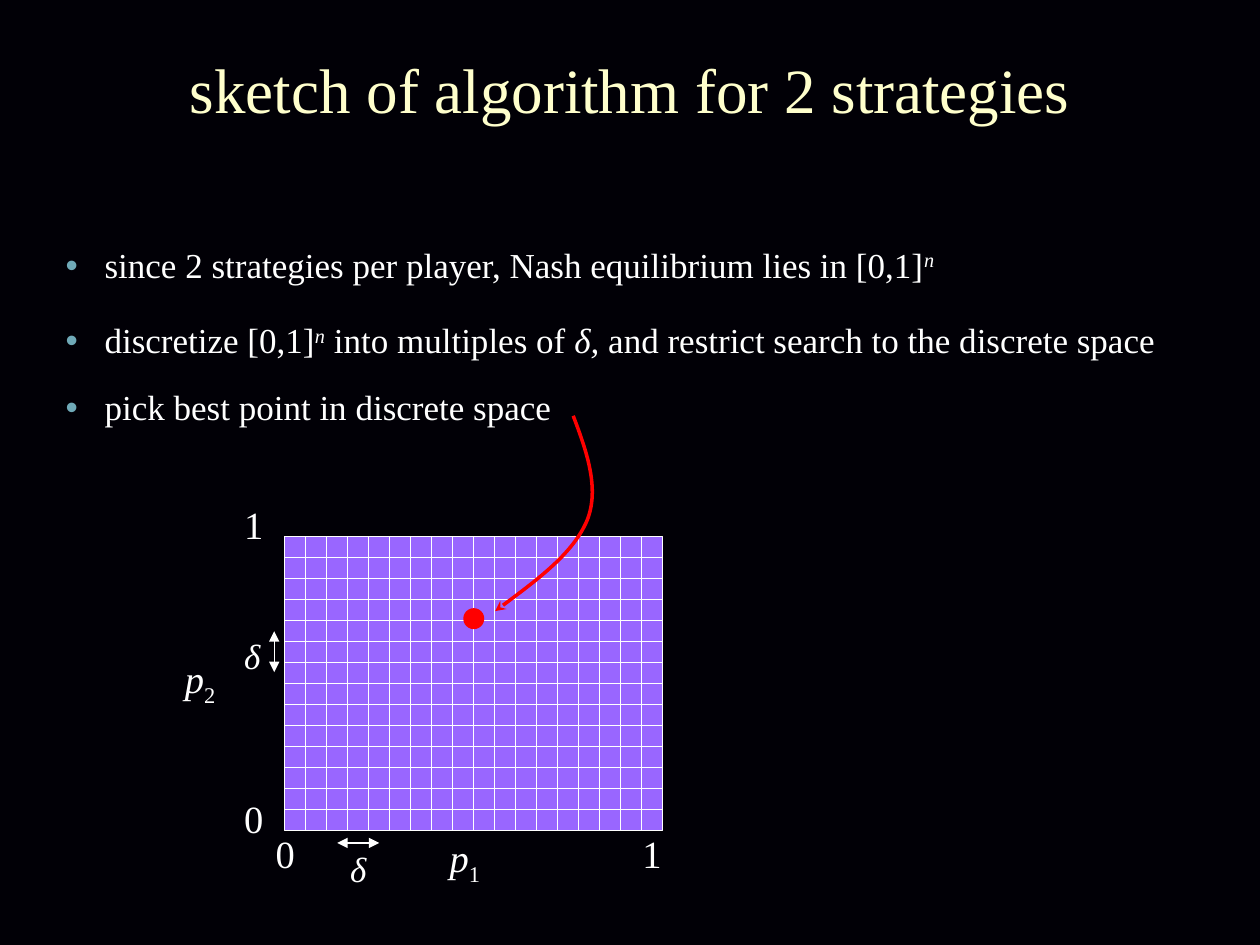
from lxml import etree
from pptx import Presentation
from pptx.dml.color import RGBColor
from pptx.enum.shapes import MSO_CONNECTOR, MSO_SHAPE
from pptx.enum.text import MSO_ANCHOR, MSO_AUTO_SIZE, PP_ALIGN
from pptx.oxml.ns import qn
from pptx.util import Inches, Pt

STRAIGHT = MSO_CONNECTOR.STRAIGHT
RECTANGLE, OVAL = MSO_SHAPE.RECTANGLE, MSO_SHAPE.OVAL
TOP, MIDDLE = MSO_ANCHOR.TOP, MSO_ANCHOR.MIDDLE
CENTER = PP_ALIGN.CENTER
FIT_SHAPE, NO_FIT = MSO_AUTO_SIZE.SHAPE_TO_FIT_TEXT, MSO_AUTO_SIZE.NONE

FONT = "Times New Roman"
BLACK, WHITE, CREAM = "010006", "FFFFFF", "FFFFCC"
PURPLE, RED, TEAL = "9966FF", "FF0000", "6FA9B7"

# The search space: square cells of side delta
COLUMNS, ROWS = 18, 14
CELL = 1 / 6
GRID_LEFT, GRID_TOP = 2.26, 4.26

PLAIN, ITALIC, POWER, INDEX = "plain", "italic", "power", "index"
BASELINES = {POWER: "30000", INDEX: "-25000"}

# Space before each bullet in points, then its spans
BULLETS = [
    (0, [("since 2 strategies per player, Nash equilibrium lies in [0,1]", PLAIN),
         ("n", POWER)]),
    (21.5, [("discretize [0,1]", PLAIN), ("n", POWER),
            (" into multiples of ", PLAIN), ("δ,", ITALIC),
            (" and restrict search to the discrete space", PLAIN)]),
    (16.5, [("pick best point in discrete space", PLAIN)]),
]

# Left, top, width, size and spans of each label around the grid
LABELS = [
    (1.84, 6.26, 0.36, 22, [("0", PLAIN)]),
    (1.84, 3.93, 0.36, 22, [("1", PLAIN)]),
    (2.09, 6.54, 0.36, 22, [("0", PLAIN)]),
    (5.0, 6.54, 0.36, 22, [("1", PLAIN)]),
    (1.37, 5.15, 0.5, 22, [("p", ITALIC), ("2", INDEX)]),
    (3.47, 6.57, 0.5, 22, [("p", ITALIC), ("1", INDEX)]),
    (1.84, 4.99, 0.44, 20, [("δ", ITALIC)]),
    (2.68, 6.68, 0.44, 20, [("δ", ITALIC)]),
]

POINTER_CURVE = [(4.55, 3.3), (4.66, 3.59), (4.76, 3.88), (4.66, 4.13),
                 (4.55, 4.39), (4.24, 4.62), (3.93, 4.85)]


def color(hex_value):
    return RGBColor.from_string(hex_value)


def grid_x(column):
    return GRID_LEFT + column * CELL


def grid_y(row):
    return GRID_TOP + row * CELL


def place(shape, left, top, width, height):
    shape.left, shape.top = Inches(left), Inches(top)
    shape.width, shape.height = Inches(width), Inches(height)


def style_font(font, size, hex_value):
    font.name, font.size = FONT, Pt(size)
    font.color.rgb = color(hex_value)


def style_line(shape, hex_value, width):
    shape.line.color.rgb = color(hex_value)
    shape.line.width = Pt(width)


def add_arrowheads(shape, kind, *ends):
    """Ends are headEnd and tailEnd, in that order."""
    for end in ends:
        etree.SubElement(shape.line._get_or_add_ln(), qn(f"a:{end}"), type=kind)


def write_spans(para, spans, size):
    for text, kind in spans:
        span = para.add_run()
        span.text = text
        style_font(span.font, size, WHITE)
        span.font.italic = kind in (ITALIC, POWER)
        if kind in BASELINES:
            span._r.get_or_add_rPr().set("baseline", BASELINES[kind])


def write_title(page):
    title = page.shapes.title
    place(title, 0.33, 0.08, 9.34, 1.25)
    title.text_frame.text = "sketch of algorithm for 2 strategies"
    title.text_frame.vertical_anchor = MIDDLE
    para = title.text_frame.paragraphs[0]
    para.alignment = CENTER
    style_font(para.runs[0].font, 36, CREAM)


def set_bullet(para):
    properties = para._p.get_or_add_pPr()
    properties.set("marL", str(Inches(0.56)))
    properties.set("indent", str(-Inches(0.31)))
    bullet_color = etree.SubElement(properties, qn("a:buClr"))
    etree.SubElement(bullet_color, qn("a:srgbClr"), val=TEAL)
    etree.SubElement(properties, qn("a:buChar"), char="•")


def write_bullets(page):
    body = page.placeholders[1]
    place(body, 0.17, 1.92, 9.67, 1.5)
    frame = body.text_frame
    frame.auto_size, frame.vertical_anchor = NO_FIT, TOP
    for number, (gap, spans) in enumerate(BULLETS):
        para = frame.add_paragraph() if number else frame.paragraphs[0]
        para.line_spacing, para.space_before = 0.9, Pt(gap)
        set_bullet(para)
        write_spans(para, spans, 20)


def add_filled(page, preset, left, top, width, height, fill):
    shape = page.shapes.add_shape(preset, 0, 0, 0, 0)
    place(shape, left, top, width, height)
    shape.shadow.inherit = False
    shape.fill.solid()
    shape.fill.fore_color.rgb = color(fill)
    return shape


def add_line(page, start, end):
    line = page.shapes.add_connector(
        STRAIGHT, *(Inches(length) for length in (*start, *end)))
    style_line(line, WHITE, 0.75)
    etree.SubElement(line._element.spPr, qn("a:effectLst"))
    return line


def add_grid(page):
    square = add_filled(page, RECTANGLE, GRID_LEFT, GRID_TOP,
                        COLUMNS * CELL, ROWS * CELL, PURPLE)
    style_line(square, WHITE, 0.75)
    for column in range(1, COLUMNS):
        add_line(page, (grid_x(column), grid_y(0)), (grid_x(column), grid_y(ROWS)))
    for row in range(1, ROWS):
        add_line(page, (grid_x(0), grid_y(row)), (grid_x(COLUMNS), grid_y(row)))


def add_delta_arrows(page):
    row_arrow = add_line(page, (grid_x(-0.5), grid_y(4.5)), (grid_x(-0.5), grid_y(6.45)))
    column_arrow = add_line(page, (grid_x(2.5), 6.69), (grid_x(4.5), 6.69))
    for arrow in (row_arrow, column_arrow):
        add_arrowheads(arrow, "triangle", "headEnd", "tailEnd")


def add_label(page, left, top, width, size, spans):
    box = page.shapes.add_textbox(Inches(left), Inches(top), Inches(width), Inches(0.45))
    box.text_frame.word_wrap = False
    box.text_frame.auto_size = FIT_SHAPE
    write_spans(box.text_frame.paragraphs[0], spans, size)


def add_best_point(page):
    point = add_filled(page, OVAL, grid_x(8.5), grid_y(3.4), CELL, CELL, RED)
    point.line.fill.background()


def add_pointer(page):
    """Draw a curve whose points are a start and then triples of Bezier points."""
    start, *others = [(Inches(x), Inches(y)) for x, y in POINTER_CURVE]
    builder = page.shapes.build_freeform(*start)
    builder.add_line_segments(others, close=False)
    pointer = builder.convert_to_shape()
    segments = list(pointer._element.iter(qn("a:lnTo")))
    outline = segments[0].getparent()
    for first in range(0, len(segments), 3):
        curve = etree.SubElement(outline, qn("a:cubicBezTo"))
        for segment in segments[first:first + 3]:
            curve.append(segment[0])
            outline.remove(segment)
    pointer.shadow.inherit = False
    pointer.fill.background()
    style_line(pointer, RED, 2)
    add_arrowheads(pointer, "stealth", "tailEnd")


def main():
    deck = Presentation()
    deck.slide_width, deck.slide_height = Inches(10), Inches(7.5)
    page = deck.slides.add_slide(deck.slide_layouts[1])
    page.background.fill.solid()
    page.background.fill.fore_color.rgb = color(BLACK)
    write_title(page)
    write_bullets(page)
    add_grid(page)
    add_delta_arrows(page)
    for label in LABELS:
        add_label(page, *label)
    add_best_point(page)
    add_pointer(page)
    deck.save("out.pptx")


if __name__ == "__main__":
    main()
